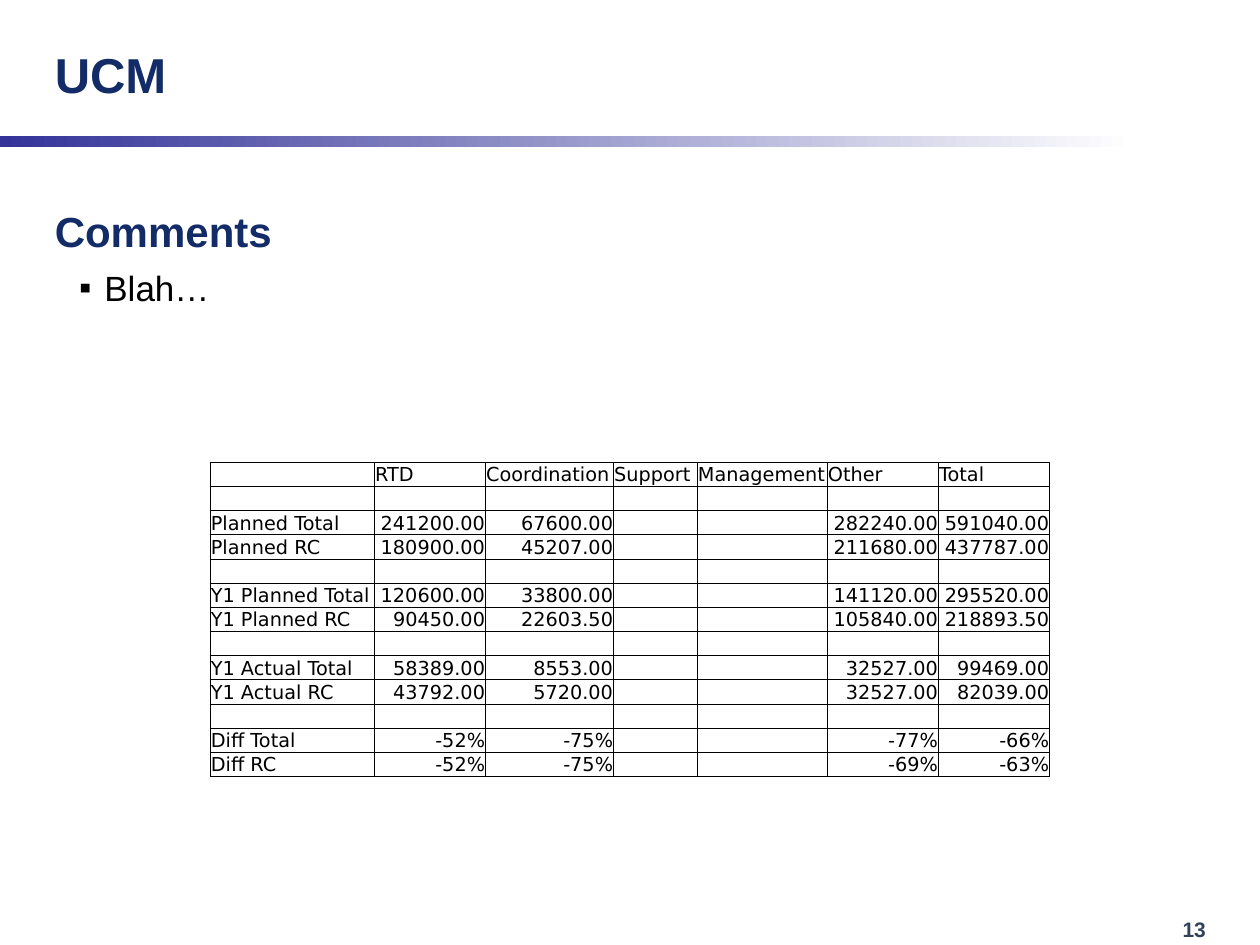
from lxml import etree
from pptx import Presentation
from pptx import util as u
from pptx.dml.color import RGBColor
from pptx.enum import shapes, text
from pptx.oxml.ns import qn

# Content
TITLE = "UCM"
PAGE_NUMBER = "13"
COMMENTS = [("Comments", "heading"), ("Blah…", "bullet")]
HEADER = ["", "RTD", "Coordination", "Support", "Management", "Other", "Total"]
BUDGET_GROUPS = [
    [("Planned Total", "241200.00", "67600.00", "", "", "282240.00", "591040.00"),
     ("Planned RC", "180900.00", "45207.00", "", "", "211680.00", "437787.00")],
    [("Y1 Planned Total", "120600.00", "33800.00", "", "", "141120.00", "295520.00"),
     ("Y1 Planned RC", "90450.00", "22603.50", "", "", "105840.00", "218893.50")],
    [("Y1 Actual Total", "58389.00", "8553.00", "", "", "32527.00", "99469.00"),
     ("Y1 Actual RC", "43792.00", "5720.00", "", "", "32527.00", "82039.00")],
    [("Diff Total", "-52%", "-75%", "", "", "-77%", "-66%"),
     ("Diff RC", "-52%", "-75%", "", "", "-69%", "-63%")],
]

# Theme: colours, type sizes and paragraph formats
NAVY, BLACK = RGBColor(0x13, 0x2B, 0x66), RGBColor(0, 0, 0)
THEME = {
    "title": {"name": "Arial", "size": u.Pt(28), "bold": True, "color": NAVY},
    "heading": {"name": "Arial", "size": u.Pt(24), "bold": True, "color": NAVY},
    "bullet": {"name": "Arial", "size": u.Pt(20), "bold": False, "color": BLACK},
    "cell": {"name": "DejaVu Sans", "size": u.Pt(11), "bold": False, "color": BLACK},
    "number": {"name": "Arial", "size": u.Pt(12), "bold": True,
               "color": RGBColor(0x32, 0x42, 0x5D)},
    "band": [(0, RGBColor(0x33, 0x33, 0x99)), (0.9, RGBColor(255, 255, 255))],
    "border": ("000000", u.Pt(0.5)),
}
PARAGRAPHS = {  # level, left margin, first-line indent, space before, bullet
    "heading": (0, u.Cm(0.97), u.Cm(-0.97), u.Pt(0), None),
    "bullet": (1, u.Cm(1), u.Cm(-0.51), u.Pt(6), "▪"),
}
COLUMN_WIDTHS = [3.31, 2.24, 2.58, 1.69, 2.62, 2.24, 2.24]
ROW_HEIGHT = 0.48


def set_all(target, values):
    for name, value in values.items():
        setattr(target, name, value)


def place(shape, left, top, width, height):
    set_all(shape, {"left": u.Cm(left), "top": u.Cm(top),
                    "width": u.Cm(width), "height": u.Cm(height)})


def write(paragraph, words, style):
    run = paragraph.add_run()
    run.text = words
    values = dict(THEME[style])
    run.font.color.rgb = values.pop("color")
    set_all(run.font, values)


def set_bullet(paragraph, kind):
    level, margin, indent, space, bullet = PARAGRAPHS[kind]
    paragraph.level = level
    properties = paragraph._p.get_or_add_pPr()
    properties.set("marL", str(margin))
    properties.set("indent", str(indent))
    if bullet:
        etree.SubElement(properties, qn("a:buFont"), typeface="Arial")
        etree.SubElement(properties, qn("a:buChar"), char=bullet)
    else:
        etree.SubElement(properties, qn("a:buNone"))
    paragraph.space_before = space


def draw_borders(cell):
    color, width = THEME["border"]
    properties = cell._tc.get_or_add_tcPr()
    for position, side in enumerate(("a:lnL", "a:lnR", "a:lnT", "a:lnB")):
        line = etree.Element(qn(side), w=str(width))
        fill = etree.SubElement(line, qn("a:solidFill"))
        etree.SubElement(fill, qn("a:srgbClr"), val=color)
        properties.insert(position, line)


def fill_cell(cell, words, align):
    set_all(cell, {"margin_left": u.Cm(0.01), "margin_right": u.Cm(0.01),
                   "margin_top": u.Cm(0.02), "margin_bottom": 0,
                   "vertical_anchor": text.MSO_ANCHOR.BOTTOM})
    cell.fill.background()
    draw_borders(cell)
    paragraph = cell.text_frame.paragraphs[0]
    paragraph.alignment = align
    if words:
        write(paragraph, words, "cell")
    else:  # keeps empty rows as low as the filled ones
        style = THEME["cell"]
        end = etree.SubElement(paragraph._p, qn("a:endParaRPr"),
                               sz=str(style["size"].centipoints))
        etree.SubElement(end, qn("a:latin"), typeface=style["name"])


def main():
    presentation = Presentation()
    presentation.slide_width, presentation.slide_height = u.Cm(25.4), u.Cm(19.05)
    slide = presentation.slides.add_slide(presentation.slide_layouts[1])
    title, body = slide.placeholders

    # Gradient band under the title
    band = slide.shapes.add_shape(shapes.MSO_SHAPE.RECTANGLE, 0, 0, 0, 0)
    place(band, 0, 2.75, 25.4, 0.21)
    band.shadow.inherit = False
    band.line.fill.background()
    band.fill.gradient()
    band.fill.gradient_angle = 0
    for stop, (position, color) in zip(band.fill.gradient_stops, THEME["band"]):
        stop.position = position
        stop.color.rgb = color

    # Page number
    number = slide.shapes.add_textbox(0, 0, 0, 0)
    place(number, 23.59, 18.35, 1.63, 0.76)
    number.text_frame.word_wrap = True
    write(number.text_frame.paragraphs[0], PAGE_NUMBER, "number")

    # Title
    place(title, 0.85, 0.21, 17.98, 2.54)
    set_all(title.text_frame, {"vertical_anchor": text.MSO_ANCHOR.MIDDLE,
                               "auto_size": text.MSO_AUTO_SIZE.NONE})
    title.text_frame.paragraphs[0].alignment = text.PP_ALIGN.LEFT
    write(title.text_frame.paragraphs[0], TITLE, "title")

    # Comments
    place(body, 0.85, 4.02, 23.7, 14.17)
    frame = body.text_frame
    frame.auto_size = text.MSO_AUTO_SIZE.NONE
    for index, (words, kind) in enumerate(COMMENTS):
        paragraph = frame.add_paragraph() if index else frame.paragraphs[0]
        set_bullet(paragraph, kind)
        write(paragraph, words, kind)

    # Budget table: an empty row opens each group
    rows = [HEADER]
    for group in BUDGET_GROUPS:
        rows += [[""] * len(HEADER), *group]
    table = slide.shapes.add_table(
        len(rows), len(HEADER), u.Cm(4.24), u.Cm(9.32),
        u.Cm(sum(COLUMN_WIDTHS)), u.Cm(ROW_HEIGHT * len(rows))).table
    set_all(table, {"first_row": False, "horz_banding": False})
    for column, width in zip(table.columns, COLUMN_WIDTHS):
        column.width = u.Cm(width)
    for row_index, values in enumerate(rows):
        table.rows[row_index].height = u.Cm(ROW_HEIGHT)
        for column_index, words in enumerate(values):
            is_number = row_index > 0 and column_index > 0
            align = text.PP_ALIGN.RIGHT if is_number else text.PP_ALIGN.LEFT
            fill_cell(table.cell(row_index, column_index), words, align)

    presentation.save("out.pptx")


if __name__ == "__main__":
    main()
